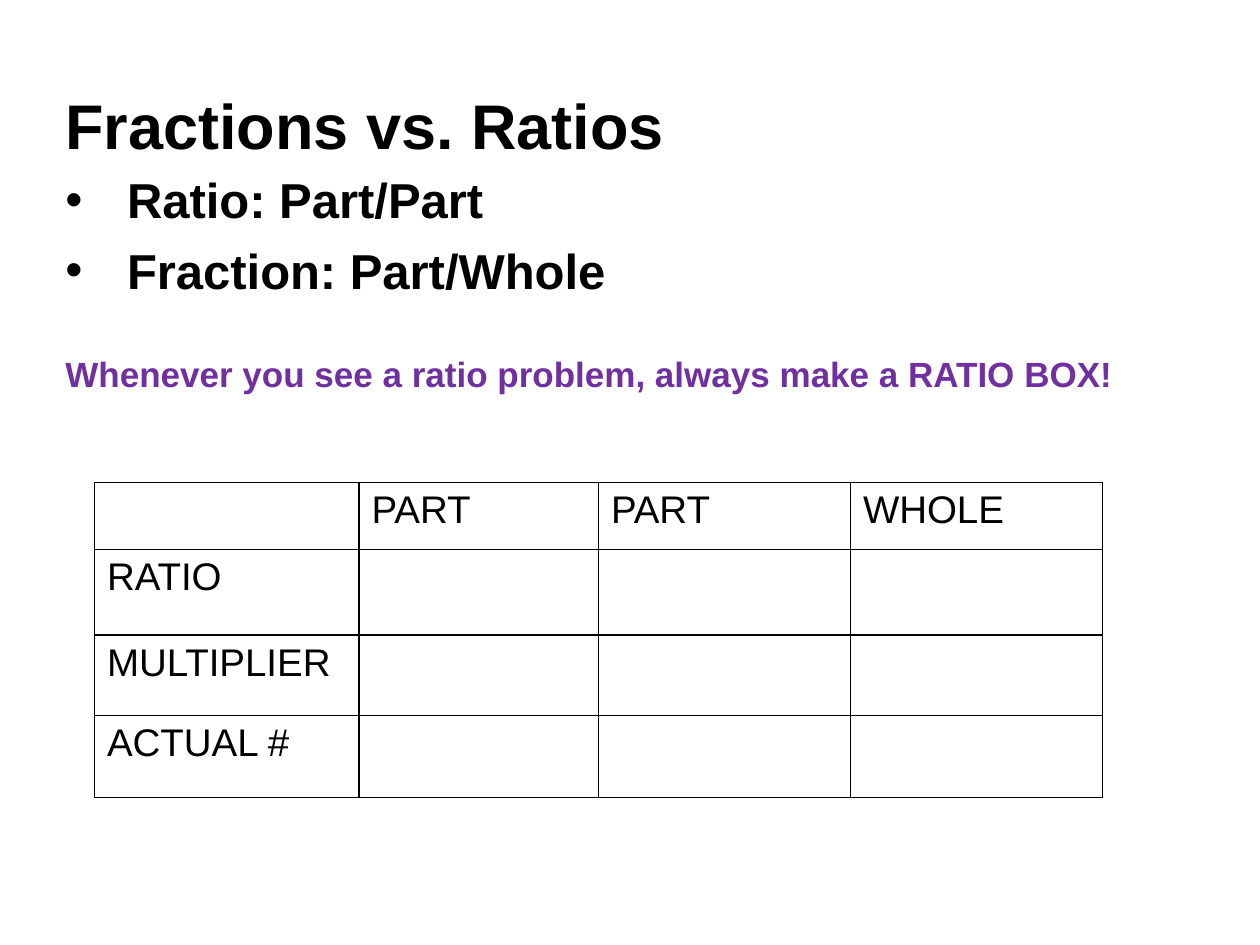
from dataclasses import dataclass

from lxml.etree import SubElement
from pptx import Presentation
from pptx.dml.color import RGBColor
from pptx.enum.text import MSO_ANCHOR, PP_ALIGN
from pptx.oxml.ns import qn
from pptx.util import Inches, Pt

BLACK = RGBColor(0, 0, 0)
PURPLE = RGBColor(0x70, 0x30, 0xA0)
LEFT = 0.42
COLS = (2.1, 1.9, 2, 2)
ROWS = (0.53, 0.68, 0.64, 0.65)
HEADS = ("", "PART", "PART", "WHOLE")
SIDES = ("", "RATIO", "MULTIPLIER", "ACTUAL #")


@dataclass
class Block:
    lines: tuple[str, ...]
    top: float
    width: float
    height: float
    size: int
    color: RGBColor = BLACK
    bullet: bool = False


TITLE = Block(("Fractions vs. Ratios",), 0.64, 5.5, 0.68, 36)
POINTS = Block(("Ratio: Part/Part", "Fraction: Part/Whole"), 1.3, 5.5, 1.1, 28, bullet=True)
RULE = Block(("Whenever you see a ratio problem, always make a RATIO BOX!",),
             2.75, 8.92, 0.43, 20, PURPLE)


def style(font, size: int, color: RGBColor, bold: bool) -> None:
    for key, value in {"name": "Arial", "size": Pt(size), "bold": bold}.items():
        setattr(font, key, value)
    font.color.rgb = color


def add_dot(para) -> None:
    """Give a paragraph a bullet with a hanging indent."""
    props = para._p.get_or_add_pPr()
    hang = Inches(0.49)
    props.set("marL", str(hang))
    props.set("indent", str(-hang))
    SubElement(props, qn("a:buFont"), typeface="Arial")
    SubElement(props, qn("a:buChar"), char="•")


def fill_text(shape, block: Block) -> None:
    place = {"left": LEFT, "top": block.top, "width": block.width, "height": block.height}
    for key, value in place.items():
        setattr(shape, key, Inches(value))
    frame = shape.text_frame
    frame.word_wrap = True
    frame.vertical_anchor = MSO_ANCHOR.TOP
    frame.text = "\n".join(block.lines)
    for i, para in enumerate(frame.paragraphs):
        para.alignment = PP_ALIGN.LEFT
        para.line_spacing = 1.0
        para.space_before = Pt(6.5 if i else 0)
        if block.bullet:
            add_dot(para)
        style(para.runs[0].font, block.size, block.color, True)


def frame_cell(cell) -> None:
    """Draw a thin black line on all four sides and leave the cell unfilled."""
    props = cell._tc.get_or_add_tcPr()
    for side in ("a:lnL", "a:lnR", "a:lnT", "a:lnB"):
        line = SubElement(props, qn(side), w=str(Pt(1)))
        fill = SubElement(line, qn("a:solidFill"))
        SubElement(fill, qn("a:srgbClr"), val=str(BLACK))
    cell.fill.background()


def add_grid(slide) -> None:
    table = slide.shapes.add_table(
        len(ROWS), len(COLS), Inches(0.75), Inches(3.83),
        Inches(sum(COLS)), Inches(sum(ROWS))).table
    table.first_row = table.horz_banding = False
    for col, width in zip(table.columns, COLS):
        col.width = Inches(width)
    for r, height in enumerate(ROWS):
        table.rows[r].height = Inches(height)
        for c, head in enumerate(HEADS):
            cell = table.cell(r, c)
            cell.text = SIDES[r] if c == 0 else head if r == 0 else ""
            style(cell.text_frame.paragraphs[0].font, 22, BLACK, False)
            frame_cell(cell)


def main() -> None:
    deck = Presentation()
    deck.slide_width, deck.slide_height = Inches(10), Inches(7.5)
    slide = deck.slides.add_slide(deck.slide_layouts[5])
    fill_text(slide.shapes.title, TITLE)
    for block in (POINTS, RULE):
        fill_text(slide.shapes.add_textbox(0, 0, 0, 0), block)
    add_grid(slide)
    deck.save("out.pptx")


if __name__ == "__main__":
    main()
